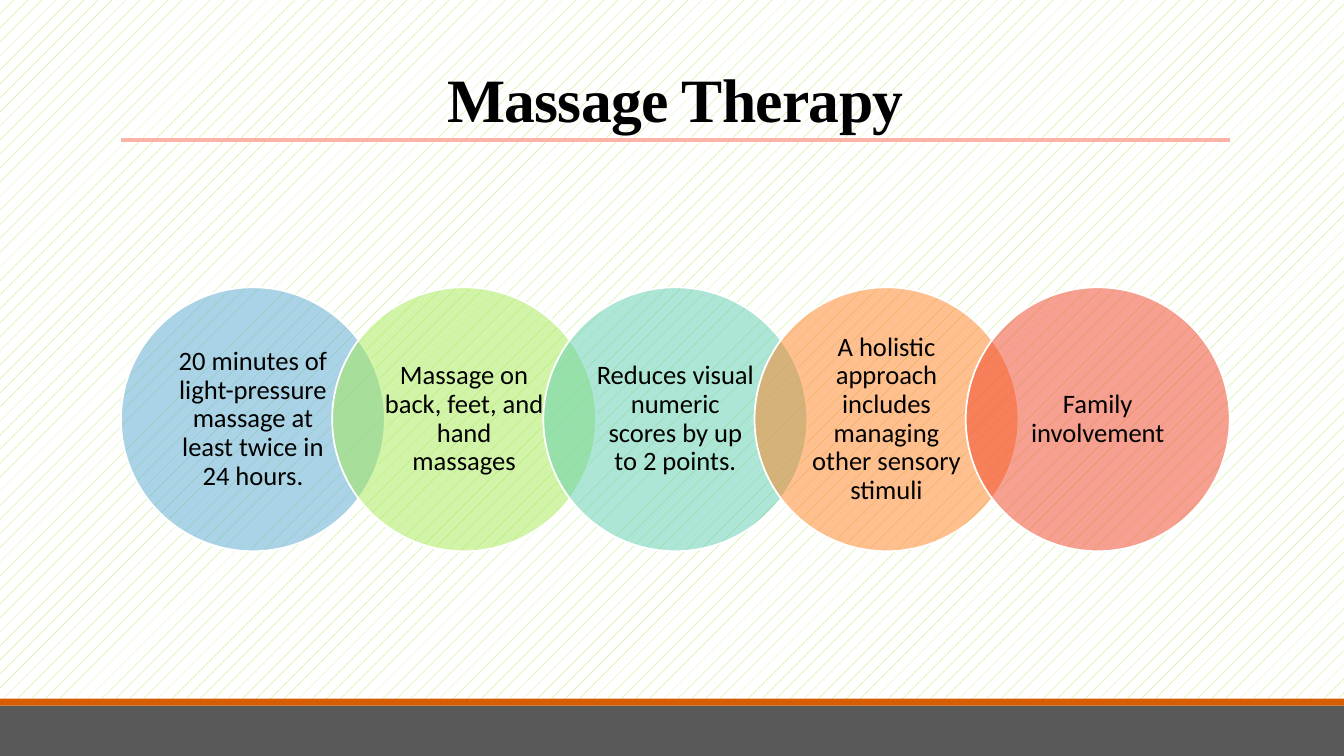
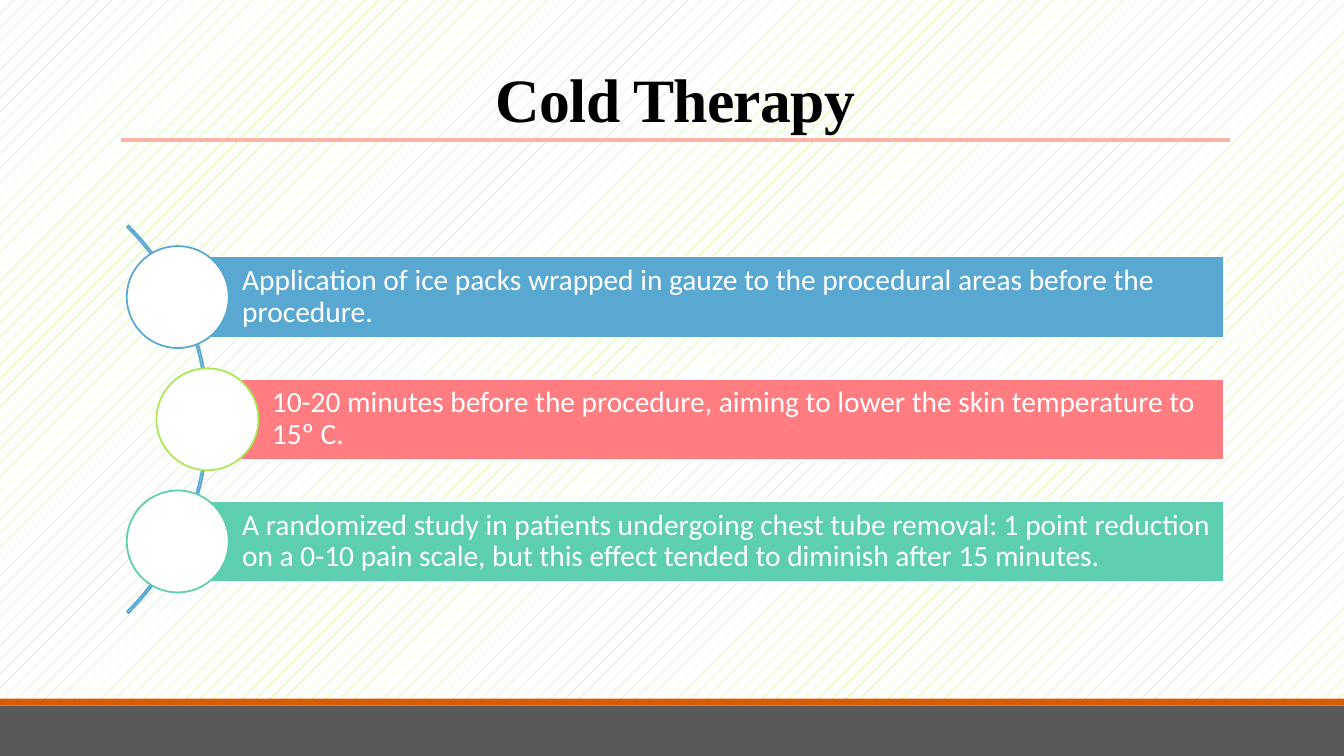
import pptx
import pptx.util
import pptx.dml.color
import pptx.enum.dml
import pptx.enum.shapes
import pptx.enum.text
import pptx.oxml
import pptx.oxml.ns

Pt = pptx.util.Pt
SHAPE = pptx.enum.shapes.MSO_SHAPE
ALIGN = pptx.enum.text.PP_ALIGN
ANCHOR = pptx.enum.text.MSO_ANCHOR

COLORS = {
    "black": "000000", "white": "FFFFFF", "gray": "595959", "rust": "D85C00",
    "rule": "F9B3A7", "blue": "59A8D1", "lime": "A7EA52", "mint": "5DCEAF",
    "orange": "FF8021", "red": "F14124", "pink": "FF7C80",
}
WIDTH, HEIGHT = 960, 540
LEFT, CONTENT_W = 86.4, 792
MIDDLE = 299.5

MASSAGE = [
    ("20 minutes of light-pressure massage at least twice in 24 hours.", "blue"),
    ("Massage on back, feet, and hand massages", "lime"),
    ("Reduces visual numeric scores by up to 2 points.", "mint"),
    ("A holistic approach includes managing other sensory stimuli", "orange"),
    ("Family involvement", "red"),
]
COLD = [
    ("Application of ice packs wrapped in gauze to the procedural areas before "
     "the procedure.", "blue", "blue", 127),
    ("10-20 minutes before the procedure, aiming to lower the skin temperature "
     "to 15º C.", "pink", "lime", 148.2),
    ("A randomized study in patients undergoing chest tube removal: 1 point "
     "reduction on a 0-10 pain scale, but this effect tended to diminish after "
     "15 minutes.", "mint", "mint", 127),
]


def rgb(name):
    """Return the named colour."""
    return pptx.dml.color.RGBColor.from_string(COLORS[name])


def add_shape(s, kind, box, fill=None, line=None):
    """Add a flat shape with an optional fill and outline."""
    sp = s.shapes.add_shape(kind, *map(Pt, box))
    sp.shadow.inherit = False
    if fill:
        sp.fill.solid()
        sp.fill.fore_color.rgb = rgb(fill)
    else:
        sp.fill.background()
    if line:
        sp.line.color.rgb = rgb(line)
        sp.line.width = Pt(1.25)
    else:
        sp.line.fill.background()
    return sp


def set_transparency(sp, percent):
    """Make a solid fill partly transparent."""
    color = sp.element.spPr.find(".//" + pptx.oxml.ns.qn("a:srgbClr"))
    alpha = pptx.oxml.parse_xml(
        f'<a:alpha {pptx.oxml.ns.nsdecls("a")} val="{(100 - percent) * 1000}"/>')
    color.append(alpha)


def set_text(sp, text, font, size, color, align, spacing, insets=None,
             anchor=ANCHOR.MIDDLE):
    """Write one formatted paragraph into a shape."""
    tf = sp.text_frame
    tf.text = text
    tf.word_wrap = True
    tf.auto_size = pptx.enum.text.MSO_AUTO_SIZE.NONE
    tf.vertical_anchor = anchor
    if insets:
        tf.margin_left, tf.margin_top, tf.margin_right, tf.margin_bottom = map(Pt, insets)
    p = tf.paragraphs[0]
    p.alignment = align
    p.line_spacing = spacing
    p.font.name = font
    p.font.size = Pt(size)
    p.font.color.rgb = rgb(color)
    return p


def add_rule(s, x, y, width):
    """Add the thin line below the title."""
    line = s.shapes.add_connector(pptx.enum.shapes.MSO_CONNECTOR.STRAIGHT,
                                  Pt(x), Pt(y), Pt(x + width), Pt(y))
    line.line.color.rgb = rgb("rule")
    line.line.width = Pt(2.25)
    line.element.spPr.append(
        pptx.oxml.parse_xml(f'<a:effectLst {pptx.oxml.ns.nsdecls("a")}/>'))


def add_slide(prs, title):
    """Add a slide with its title, rule and bottom bands."""
    s = prs.slides.add_slide(prs.slide_layouts[5])
    add_shape(s, SHAPE.RECTANGLE, (0, 504, WIDTH, 36), "gray")
    add_shape(s, SHAPE.RECTANGLE, (0, 499, WIDTH, 5), "rust")
    add_rule(s, LEFT, 100, CONTENT_W)
    sp = s.shapes.title
    sp.left, sp.top, sp.width, sp.height = map(Pt, (LEFT, 22.4, CONTENT_W, 77.6))
    p = set_text(sp, title, "Times New Roman", 44, "black", ALIGN.CENTER, 0.85,
                 anchor=ANCHOR.BOTTOM)
    p.font.bold = True
    p.runs[0].font.bold = True
    p.runs[0]._r.get_or_add_rPr().set("spc", "-50")
    return s


def add_circle_chain(s, items):
    """Add a row of circles that overlap by a fifth."""
    size = CONTENT_W / (0.8 * (len(items) - 1) + 1)
    for i, (text, color) in enumerate(items):
        box = (LEFT + 0.8 * size * i, MIDDLE - size / 2, size, size)
        sp = add_shape(s, SHAPE.OVAL, box, color, "white")
        set_transparency(sp, 50)
        set_text(sp, text, "Calibri", 19, "black", ALIGN.CENTER, 0.9, (10, 2, 10, 2))


def add_curved_list(s, items):
    """Add bars whose round markers follow an arc."""
    arc_size, bar_h, marker, pitch, right = 391.7, 58, 72.8, 87.3, 874.4
    arc = add_shape(s, SHAPE.BLOCK_ARC,
                    (-242.6, MIDDLE - arc_size / 2, arc_size, arc_size), line="blue")
    for i, value in enumerate((189, 27, 0.004)):
        arc.adjustments[i] = value
    for i, (text, fill, outline, x) in enumerate(items):
        y = MIDDLE + (i - (len(items) - 1) / 2) * pitch
        bar = add_shape(s, SHAPE.RECTANGLE, (x, y - bar_h / 2, right - x, bar_h),
                        fill, "white")
        set_text(bar, text, "Calibri", 21, "white", ALIGN.LEFT, 0.9, (46, 4, 4, 4))
        add_shape(s, SHAPE.OVAL, (x - marker / 2, y - marker / 2, marker, marker),
                  "white", outline)


def set_background(prs):
    """Give the slide master a dotted background."""
    fill = prs.slide_master.background.fill
    fill.patterned()
    fill.pattern = pptx.enum.dml.MSO_PATTERN.PERCENT_5
    fill.fore_color.rgb = rgb("lime")
    fill.back_color.rgb = rgb("white")


def main():
    """Build and save the presentation."""
    prs = pptx.Presentation()
    prs.slide_width, prs.slide_height = Pt(WIDTH), Pt(HEIGHT)
    set_background(prs)
    add_circle_chain(add_slide(prs, "Massage Therapy"), MASSAGE)
    add_curved_list(add_slide(prs, "Cold Therapy"), COLD)
    prs.save("out.pptx")


if __name__ == "__main__":
    main()
